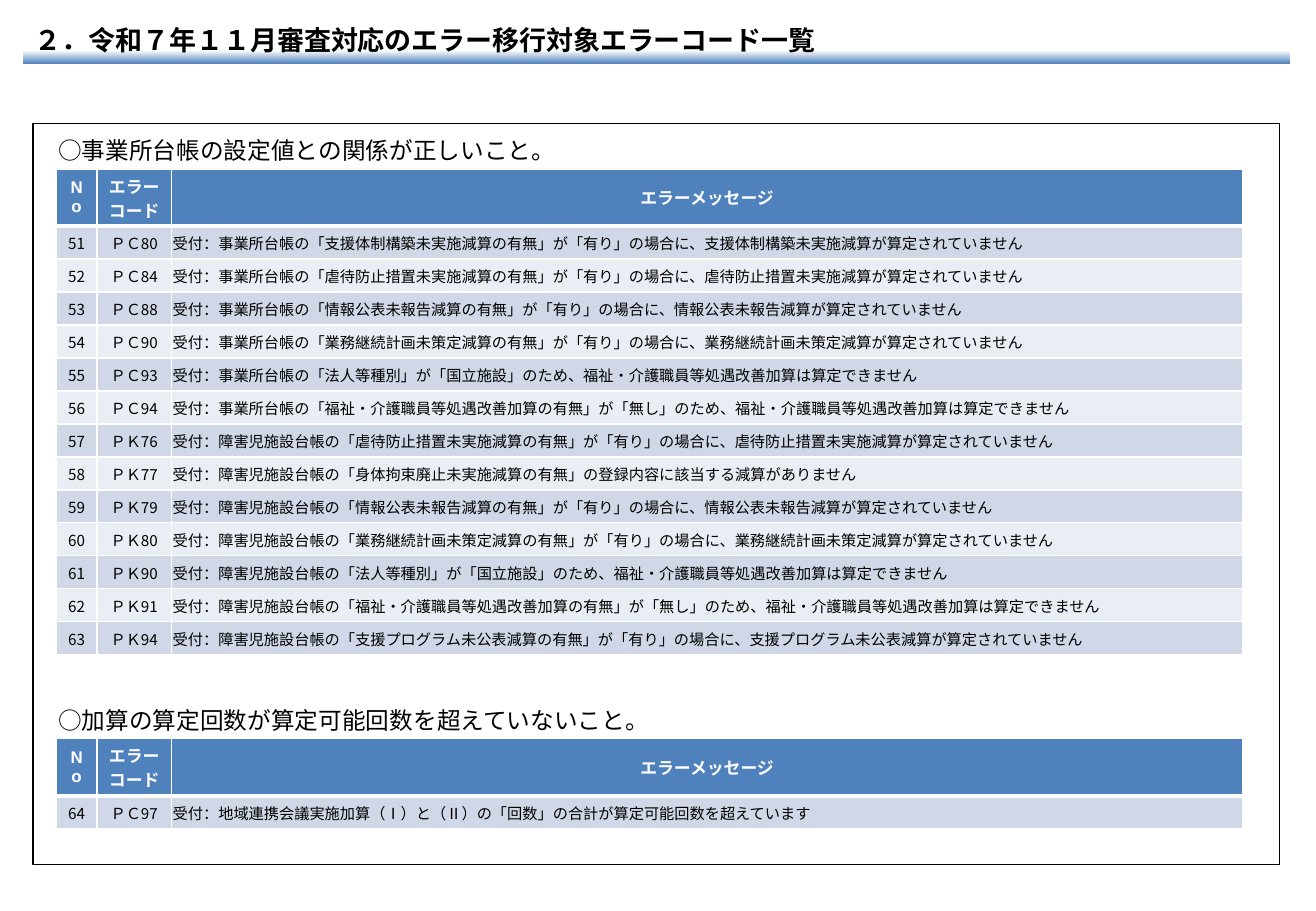
from dataclasses import dataclass

from pptx import Presentation
from pptx.dml.color import RGBColor
from pptx.enum.shapes import MSO_SHAPE
from pptx.enum.text import MSO_ANCHOR, PP_ALIGN
from pptx.oxml import parse_xml
from pptx.oxml.ns import nsdecls, qn
from pptx.util import Cm, Pt

BLACK = RGBColor(0x00, 0x00, 0x00)
WHITE = RGBColor(0xFF, 0xFF, 0xFF)
BLUE = RGBColor(0x4F, 0x81, 0xBD)
BANDS = (RGBColor(0xD0, 0xD8, 0xE8), RGBColor(0xE9, 0xED, 0xF4))

JP = "Noto Sans CJK JP"
TC = "Noto Sans CJK TC"

COLUMN_WIDTHS = (0.86, 1.55, 22.4)
HEADER_HEIGHT = 1.2
ROW_HEIGHT = 0.69
TABLE_LEFT = 1.17


@dataclass(frozen=True)
class TextStyle:
    size: float
    latin: str = JP
    east_asian: str = JP
    color: RGBColor = BLACK
    bold: bool = False


@dataclass(frozen=True)
class ErrorCode:
    code: str
    message: str


@dataclass(frozen=True)
class Section:
    heading: str
    heading_top: float
    heading_height: float
    table_top: float
    first_number: int
    errors: tuple[ErrorCode, ...]


TITLE = (
    ("２．", JP), ("令和", TC), ("７", JP), ("年１", TC), ("１", JP),
    ("月審査対応", TC), ("のエラー移行対象エラーコード一覧", JP),
)

HEADER = TextStyle(10, "Arial", JP, WHITE, True)
MESSAGE_HEADER = TextStyle(10, "Calibri", JP, WHITE, True)
BODY = TextStyle(9)

SECTIONS = (
    Section("事業所台帳の設定値との関係が正しいこと。", 2.72, 1.57, 3.53, 51, (
        ErrorCode("ＰＣ80", "受付：事業所台帳の「支援体制構築未実施減算の有無」が「有り」の場合に、支援体制構築未実施減算が算定されていません"),
        ErrorCode("ＰＣ84", "受付：事業所台帳の「虐待防止措置未実施減算の有無」が「有り」の場合に、虐待防止措置未実施減算が算定されていません"),
        ErrorCode("ＰＣ88", "受付：事業所台帳の「情報公表未報告減算の有無」が「有り」の場合に、情報公表未報告減算が算定されていません"),
        ErrorCode("ＰＣ90", "受付：事業所台帳の「業務継続計画未策定減算の有無」が「有り」の場合に、業務継続計画未策定減算が算定されていません"),
        ErrorCode("ＰＣ93", "受付：事業所台帳の「法人等種別」が「国立施設」のため、福祉・介護職員等処遇改善加算は算定できません"),
        ErrorCode("ＰＣ94", "受付：事業所台帳の「福祉・介護職員等処遇改善加算の有無」が「無し」のため、福祉・介護職員等処遇改善加算は算定できません"),
        ErrorCode("ＰＫ76", "受付：障害児施設台帳の「虐待防止措置未実施減算の有無」が「有り」の場合に、虐待防止措置未実施減算が算定されていません"),
        ErrorCode("ＰＫ77", "受付：障害児施設台帳の「身体拘束廃止未実施減算の有無」の登録内容に該当する減算がありません"),
        ErrorCode("ＰＫ79", "受付：障害児施設台帳の「情報公表未報告減算の有無」が「有り」の場合に、情報公表未報告減算が算定されていません"),
        ErrorCode("ＰＫ80", "受付：障害児施設台帳の「業務継続計画未策定減算の有無」が「有り」の場合に、業務継続計画未策定減算が算定されていません"),
        ErrorCode("ＰＫ90", "受付：障害児施設台帳の「法人等種別」が「国立施設」のため、福祉・介護職員等処遇改善加算は算定できません"),
        ErrorCode("ＰＫ91", "受付：障害児施設台帳の「福祉・介護職員等処遇改善加算の有無」が「無し」のため、福祉・介護職員等処遇改善加算は算定できません"),
        ErrorCode("ＰＫ94", "受付：障害児施設台帳の「支援プログラム未公表減算の有無」が「有り」の場合に、支援プログラム未公表減算が算定されていません"),
    )),
    Section("加算の算定回数が算定可能回数を超えていないこと。", 14.63, 2.29, 15.44, 64, (
        ErrorCode("ＰＣ97", "受付：地域連携会議実施加算（Ⅰ）と（Ⅱ）の「回数」の合計が算定可能回数を超えています"),
    )),
)


def add_span(para, text: str, style: TextStyle) -> None:
    span = para.add_run()
    span.text = text
    span.font.size = Pt(style.size)
    span.font.bold = style.bold
    span.font.color.rgb = style.color
    span.font.name = style.latin
    latin = span.font._element.find(qn("a:latin"))
    latin.addnext(parse_xml(f'<a:ea {nsdecls("a")} typeface="{style.east_asian}"/>'))


def set_borders(cell, top: float, bottom: float) -> None:
    properties = cell._tc.get_or_add_tcPr()
    for index, (side, width) in enumerate((("L", 1), ("R", 1), ("T", top), ("B", bottom))):
        properties.insert(index, parse_xml(
            f'<a:ln{side} {nsdecls("a")} w="{Pt(width)}"><a:solidFill>'
            f'<a:srgbClr val="{WHITE}"/></a:solidFill></a:ln{side}>'))


def fill_cell(cell, lines: tuple[str, ...], style: TextStyle, fill: RGBColor,
              align: PP_ALIGN, margins: tuple[float, float, float]) -> None:
    cell.fill.solid()
    cell.fill.fore_color.rgb = fill
    cell.vertical_anchor = MSO_ANCHOR.MIDDLE
    side, top, bottom = margins
    cell.margin_left = cell.margin_right = Cm(side)
    cell.margin_top, cell.margin_bottom = Cm(top), Cm(bottom)
    for index, line in enumerate(lines):
        para = cell.text_frame.paragraphs[0] if index == 0 else cell.text_frame.add_paragraph()
        para.alignment = align
        add_span(para, line, style)


def add_frame(page) -> None:
    frame = page.shapes.add_shape(MSO_SHAPE.RECTANGLE, Cm(0.69), Cm(2.59), Cm(26.06), Cm(15.49))
    frame.shadow.inherit = False
    frame.fill.background()
    frame.line.color.rgb = BLACK
    frame.line.width = Pt(0.75)


def add_title(page) -> None:
    bar = page.shapes.add_shape(MSO_SHAPE.RECTANGLE, Cm(0.48), Cm(0.33), Cm(26.49), Cm(1.02))
    bar.shadow.inherit = False
    bar.line.fill.background()
    bar.fill.gradient()
    bar.fill.gradient_angle = 90
    for stop, position, color in zip(bar.fill.gradient_stops, (0.01, 0.29), (BLUE, WHITE)):
        stop.position = position
        stop.color.rgb = color
    bar.text_frame.word_wrap = True
    bar.text_frame.vertical_anchor = MSO_ANCHOR.MIDDLE
    para = bar.text_frame.paragraphs[0]
    para.alignment = PP_ALIGN.LEFT
    para.space_before = Pt(3.2)
    for text, font in TITLE:
        add_span(para, text, TextStyle(16, font, font, bold=True))


def add_heading(page, section: Section) -> None:
    box = page.shapes.add_textbox(Cm(0.97), Cm(section.heading_top), Cm(26.04), Cm(section.heading_height))
    box.text_frame.word_wrap = True
    para = box.text_frame.paragraphs[0]
    para.space_before = Pt(2.8)
    add_span(para, "○", TextStyle(14, "Arial"))
    add_span(para, section.heading, TextStyle(14))


def add_error_table(page, section: Section) -> None:
    count = len(section.errors)
    table = page.shapes.add_table(
        count + 1, len(COLUMN_WIDTHS), Cm(TABLE_LEFT), Cm(section.table_top),
        Cm(sum(COLUMN_WIDTHS)), Cm(HEADER_HEIGHT + count * ROW_HEIGHT)).table
    for column, width in zip(table.columns, COLUMN_WIDTHS):
        column.width = Cm(width)
    for index, row in enumerate(table.rows):
        row.height = Cm(ROW_HEIGHT if index else HEADER_HEIGHT)

    # Header row
    headers = ((("No",), HEADER), (("エラー", "コード"), HEADER), (("エラーメッセージ",), MESSAGE_HEADER))
    for cell, (lines, style) in zip(table.rows[0].cells, headers):
        fill_cell(cell, lines, style, BLUE, PP_ALIGN.CENTER, (0.21, 0.1, 0.1))
        set_borders(cell, 1, 3)

    # Banded error rows
    aligns = (PP_ALIGN.CENTER, PP_ALIGN.CENTER, PP_ALIGN.LEFT)
    for index, error in enumerate(section.errors):
        values = (str(section.first_number + index), error.code, error.message)
        for cell, value, align in zip(table.rows[index + 1].cells, values, aligns):
            fill_cell(cell, (value,), BODY, BANDS[index % 2], align, (0.03, 0.03, 0))
            set_borders(cell, 1 if index else 3, 1)


def main() -> None:
    deck = Presentation()
    deck.slide_width, deck.slide_height = Cm(27.51), Cm(19.05)
    page = deck.slides.add_slide(deck.slide_layouts[6])
    add_frame(page)
    add_title(page)
    for section in SECTIONS:
        add_heading(page, section)
        add_error_table(page, section)
    deck.save("out.pptx")


if __name__ == "__main__":
    main()
